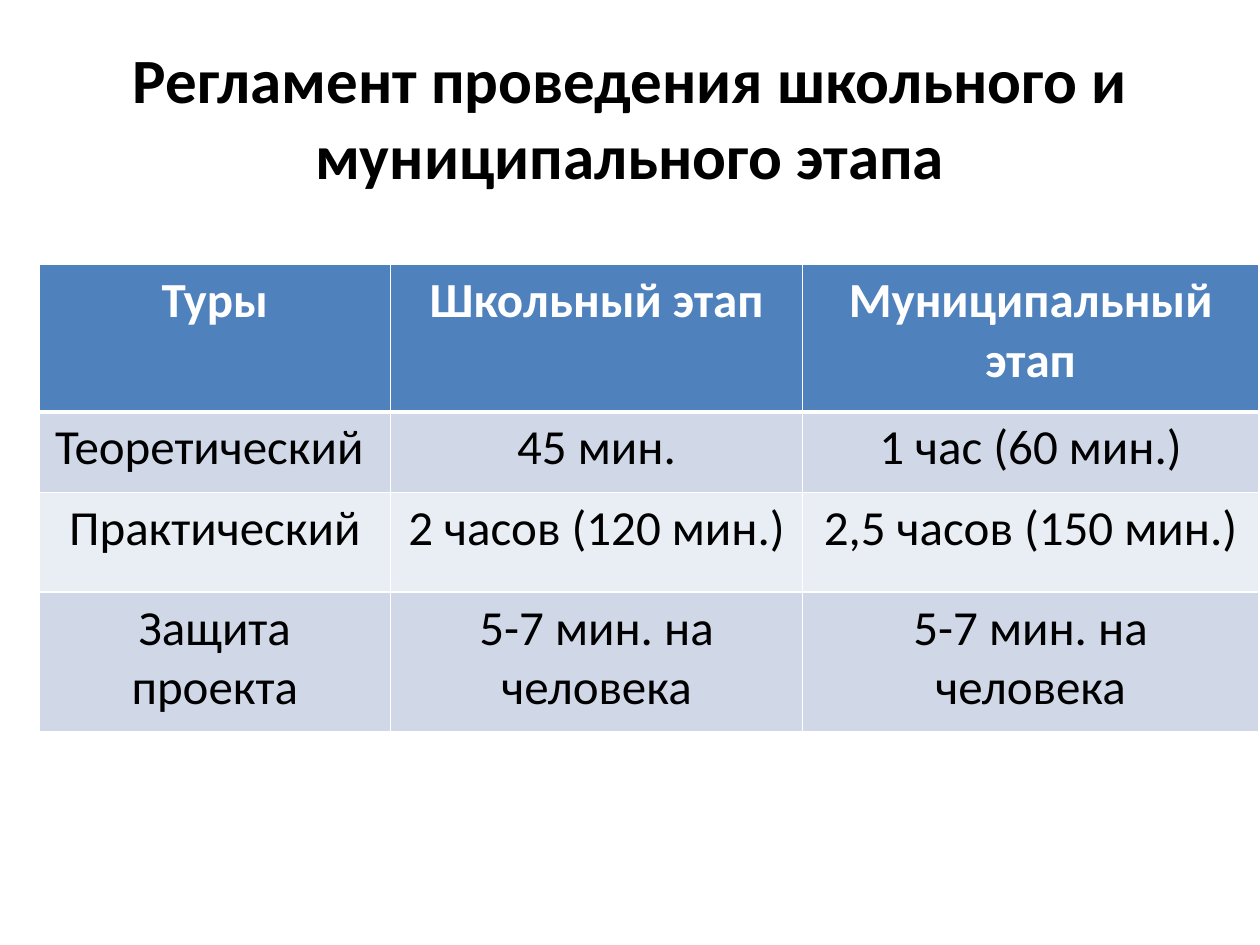
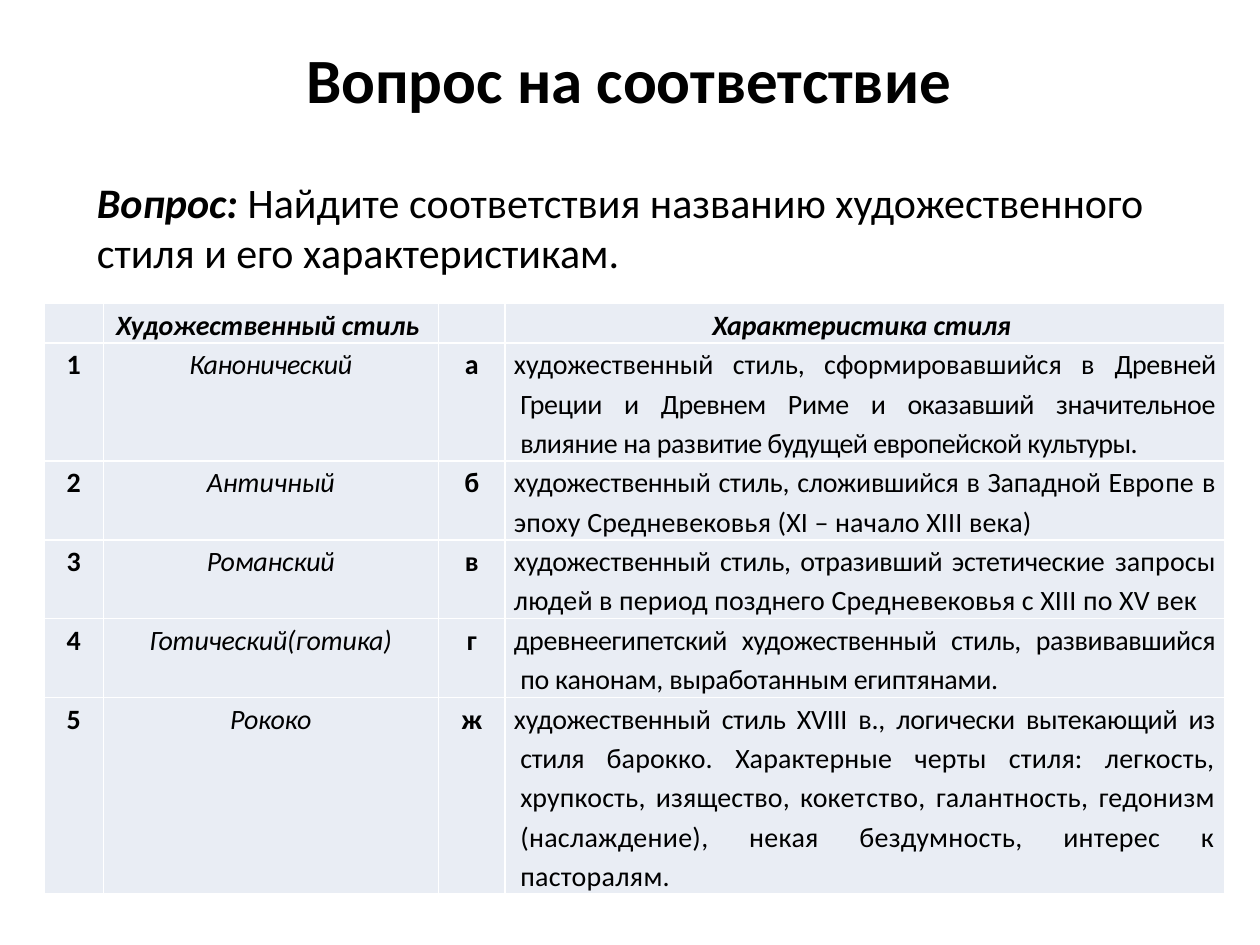
from dataclasses import dataclass

from lxml import etree
from pptx import Presentation
from pptx.dml.color import RGBColor
from pptx.enum import text
from pptx.oxml import ns
from pptx.util import Inches, Pt


@dataclass(frozen=True)
class Theme:
    font: str = "Calibri"
    ink: str = "000000"
    white: str = "FFFFFF"
    header: str = "4F81BD"
    band_dark: str = "D0D8E8"
    band_light: str = "E9EDF4"
    title_size: int = 36
    schedule_size: int = 28
    question_size: int = 24
    styles_size: int = 16
    thin_line: int = 1
    thick_line: int = 3


THEME = Theme()
CENTER = text.PP_ALIGN.CENTER
JUSTIFY = text.PP_ALIGN.JUSTIFY

STAGES = [
    ("Туры", "Школьный этап", "Муниципальный этап"),
    ("Теоретический ", "45 мин.", "1 час (60 мин.)"),
    ("Практический", "2 часов (120 мин.)", "2,5 часов (150 мин.)"),
    ("Защита проекта", "5-7 мин. на человека", "5-7 мин. на человека"),
]

ART_STYLES = [
    ("Канонический", -0.2, "а", True, [
        ("художественный стиль, сформировавшийся в ", 0),
        ("Древней Греции и Древнем Риме и оказавший значительное влияние на раз", -0.2),
        ("витие будущей европейской культуры.", -0.3)]),
    ("Античный", 0, "б", False, [
        ("художественный стиль, сложившийся в Западной Евро", -0.1),
        ("пе в эпоху Средневековья (XI – начало XIII века)", 0.1)]),
    ("Романский", -0.1, "в", False, [
        ("художественный стиль, отразивший эстетические ", -0.1),
        ("запросы людей в период позднего Средневековья с XIII по XV век", 0.1)]),
    ("Готический(готика)", -0.1, "г", True, [
        ("древнеегипетский художественный стиль, развивавшийся ", -0.2),
        ("по канонам, выработанным египтянами.", -0.1)]),
    ("Рококо", -0.1, "ж", True, [
        ("художественный стиль XVIII в., логически вытекающий из стиля ", -0.1),
        ("барокко. Характерные черты стиля: легкость, хрупкость, изящество, кокет", 0.1),
        ("ство, галантность, гедонизм (наслаждение), некая бездумность, "
         "интерес к пасторалям.", 0.2)]),
]


def format_run(run, size, color=THEME.ink, bold=False, italic=False, spacing=0):
    run.font.name = THEME.font
    run.font.size = Pt(size)
    run.font.bold = bold
    run.font.italic = italic
    run.font.color.rgb = RGBColor.from_string(color)
    if spacing:
        run.font._element.set("spc", str(round(spacing * 100)))


def add_run(paragraph, words, size, **look):
    run = paragraph.add_run()
    run.text = words
    format_run(run, size, **look)


def add_titled_slide(deck, heading, left, top):
    slide = deck.slides.add_slide(deck.slide_layouts.get_by_name("Title Only"))
    title = slide.shapes.title
    title.left, title.top = Inches(left), Inches(top)
    title.width, title.height = Inches(9), Inches(1.25)
    title.text_frame.text = heading
    title.text_frame.vertical_anchor = text.MSO_ANCHOR.MIDDLE
    paragraph = title.text_frame.paragraphs[0]
    paragraph.alignment = CENTER
    format_run(paragraph.runs[0], THEME.title_size, bold=True)
    return slide


def add_grid(slide, left, top, widths, heights):
    table = slide.shapes.add_table(
        len(heights), len(widths), Inches(left), Inches(top),
        Inches(sum(widths)), Inches(sum(heights))).table
    table.first_row = table.horz_banding = False
    for column, width in zip(table.columns, widths):
        column.width = Inches(width)
    for row, height in zip(table.rows, heights):
        row.height = Inches(height)
    return table


def paint_cell(cell, color, top=THEME.thin_line, bottom=THEME.thin_line):
    properties = cell._tc.get_or_add_tcPr()
    edges = {"L": THEME.thin_line, "R": THEME.thin_line, "T": top, "B": bottom}
    for side, width in edges.items():
        line = etree.SubElement(properties, ns.qn(f"a:ln{side}"), w=str(Pt(width)))
        fill = etree.SubElement(line, ns.qn("a:solidFill"))
        etree.SubElement(fill, ns.qn("a:srgbClr"), val=THEME.white)
    cell.fill.solid()
    cell.fill.fore_color.rgb = RGBColor.from_string(color)


def fill_style_cell(cell, pieces, align=CENTER, hanging=False, **look):
    paint_cell(cell, THEME.band_light)
    cell.margin_left = cell.margin_right = Inches(0.07)
    cell.margin_top = cell.margin_bottom = 0
    paragraph = cell.text_frame.paragraphs[0]
    paragraph.alignment = align
    paragraph.line_spacing = 1.15
    if hanging:
        indents = paragraph._p.get_or_add_pPr()
        indents.set("marL", str(Inches(0.05)))
        indents.set("indent", str(Inches(-0.05)))
    for words, spacing in pieces:
        add_run(paragraph, words, THEME.styles_size, spacing=spacing, **look)
    if not pieces:
        etree.SubElement(paragraph._p, ns.qn("a:endParaRPr"),
                         sz=str(THEME.styles_size * 100))


def add_schedule(slide):
    schedule = add_grid(slide, 0.31, 2.1, [2.79, 3.27, 3.62], [1.17, 0.64, 0.79, 1.11])
    bands = [THEME.header, THEME.band_dark, THEME.band_light, THEME.band_dark]
    for row, (entries, band) in enumerate(zip(STAGES, bands)):
        heading = row == 0
        for column, entry in enumerate(entries):
            cell = schedule.cell(row, column)
            paint_cell(cell, band,
                       top=THEME.thick_line if row == 1 else THEME.thin_line,
                       bottom=THEME.thick_line if heading else THEME.thin_line)
            cell.text_frame.text = entry
            paragraph = cell.text_frame.paragraphs[0]
            paragraph.alignment = CENTER
            format_run(paragraph.runs[0], THEME.schedule_size, bold=heading,
                       color=THEME.white if heading else THEME.ink)


def add_style_matching(slide):
    matching = add_grid(slide, 0.35, 2.41, [0.47, 2.66, 0.53, 5.71],
                        [0.31, 0.86, 0.6, 0.55, 0.55, 1.1])
    headings = ["", "Художественный стиль ", "", "Характеристика стиля "]
    for column, heading in enumerate(headings):
        fill_style_cell(matching.cell(0, column), [(heading, 0)] if heading else [],
                        bold=True, italic=True)
    for row, (name, spacing, letter, hanging, traits) in enumerate(ART_STYLES, 1):
        fill_style_cell(matching.cell(row, 0), [(str(row), 0)], bold=True)
        fill_style_cell(matching.cell(row, 1), [(name, spacing)], italic=True)
        fill_style_cell(matching.cell(row, 2), [(letter, 0)], bold=True)
        fill_style_cell(matching.cell(row, 3), traits, align=JUSTIFY, hanging=hanging)


def add_question(slide):
    question = slide.shapes.add_textbox(
        Inches(0.67), Inches(1.35), Inches(8.82), Inches(0.91)).text_frame
    question.word_wrap = True
    question.auto_size = text.MSO_AUTO_SIZE.SHAPE_TO_FIT_TEXT
    paragraph = question.paragraphs[0]
    add_run(paragraph, "Вопрос: ", THEME.question_size, bold=True, italic=True)
    add_run(paragraph, "Найдите соответствия названию художественного стиля "
                       "и его характеристикам.", THEME.question_size)


def main():
    deck = Presentation()
    deck.slide_width, deck.slide_height = Inches(10), Inches(7.5)

    add_schedule(add_titled_slide(
        deck, "Регламент проведения школьного и муниципального этапа", 0.5, 0.3))

    matching_slide = add_titled_slide(deck, "Вопрос на соответствие", 0.49, 0)
    add_style_matching(matching_slide)
    add_question(matching_slide)

    deck.save("out.pptx")


if __name__ == "__main__":
    main()
